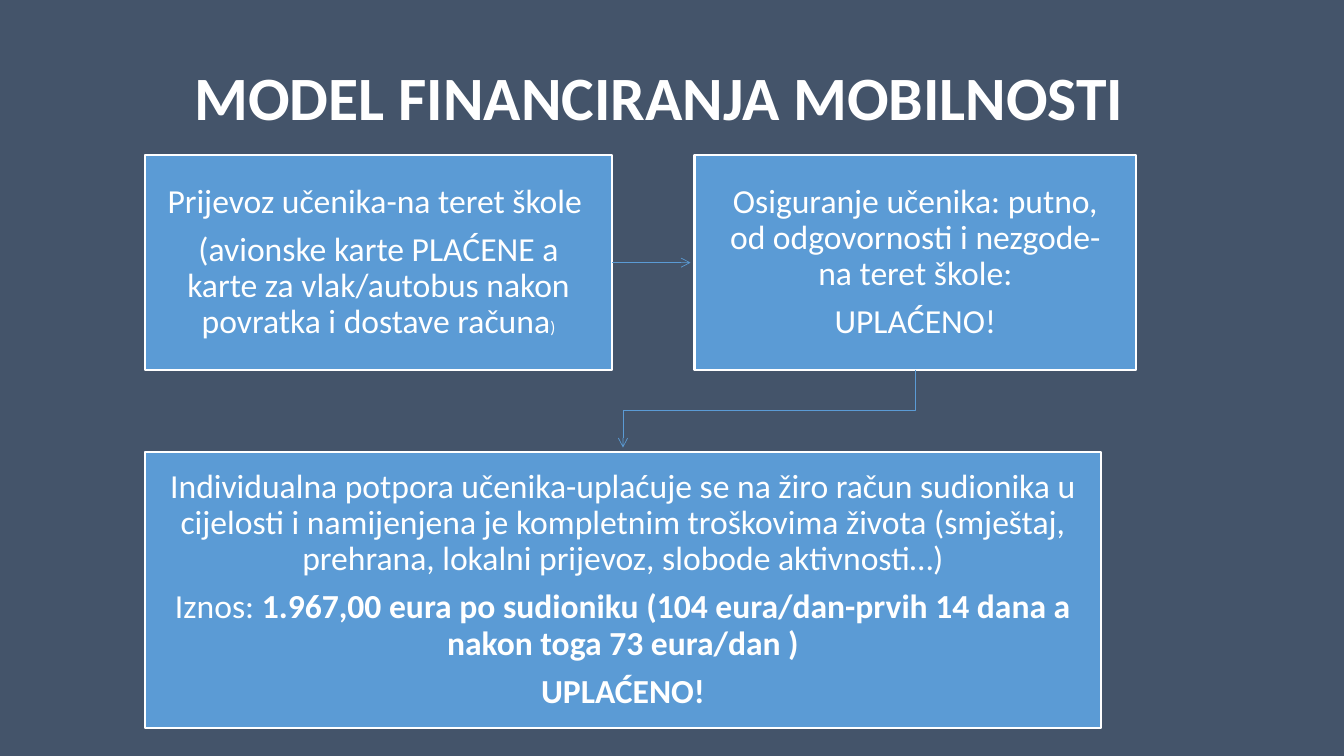
from dataclasses import dataclass

from lxml.etree import SubElement
from pptx import Presentation
from pptx.dml.color import RGBColor
from pptx.enum.shapes import MSO_CONNECTOR, MSO_SHAPE
from pptx.enum.text import MSO_ANCHOR, PP_ALIGN
from pptx.oxml.ns import qn
from pptx.shapes.autoshape import Shape
from pptx.slide import Slide
from pptx.text.text import TextFrame
from pptx.util import Pt


@dataclass(frozen=True)
class Theme:
    font: str = "Calibri"
    background: RGBColor = RGBColor(0x44, 0x54, 0x6A)
    accent: RGBColor = RGBColor(0x5B, 0x9B, 0xD5)
    white: RGBColor = RGBColor(0xFF, 0xFF, 0xFF)
    title: float = 44
    body: float = 24
    small: float = 12


THEME = Theme()
ARROW_GAP = 2.9


@dataclass(frozen=True)
class Span:
    text: str
    size: float = THEME.body
    bold: bool = False


@dataclass(frozen=True)
class Box:
    left: float
    top: float
    width: float
    height: float
    paragraphs: list[list[Span]]

    @property
    def center_x(self) -> float:
        return self.left + self.width / 2

    @property
    def center_y(self) -> float:
        return self.top + self.height / 2

    @property
    def bottom(self) -> float:
        return self.top + self.height


LEFT, TOP, ROW_HEIGHT = 103.7, 110.9, 153.4
TRANSPORT = Box(LEFT, TOP, 333.4, ROW_HEIGHT, [
    [Span("Prijevoz učenika-na teret škole ")],
    [Span("(avionske karte PLAĆENE a karte za vlak/autobus nakon "
          "povratka i dostave računa"), Span(")", size=THEME.small)],
])
INSURANCE = Box(496.1, TOP, 315.4, ROW_HEIGHT, [
    [Span("Osiguranje učenika: putno, od odgovornosti i nezgode- "
          "na teret škole:")],
    [Span("UPLAĆENO!")],
])
SUPPORT = Box(LEFT, 322.6, 682.6, 197.3, [
    [Span("Individualna potpora učenika-uplaćuje se na žiro račun sudionika "
          "u cijelosti i namijenjena je kompletnim troškovima života "
          "(smještaj, prehrana, lokalni prijevoz, slobode aktivnosti…)")],
    [Span("Iznos: "),
     Span("1.967,00 eura po sudioniku (104 eura/dan-prvih 14 dana a nakon "
          "toga 73 eura/dan )", bold=True)],
    [Span("UPLAĆENO!", bold=True)],
])


def write(tf: TextFrame, paragraphs: list[list[Span]], *,
          align: PP_ALIGN = PP_ALIGN.CENTER, space_after: float = 8.4,
          inset_x: float = 12.2, inset_y: float = 13) -> None:
    tf.word_wrap = True
    tf.vertical_anchor = MSO_ANCHOR.MIDDLE
    tf.margin_left = tf.margin_right = Pt(inset_x)
    tf.margin_top = tf.margin_bottom = Pt(inset_y)
    for i, spans in enumerate(paragraphs):
        p = tf.add_paragraph() if i else tf.paragraphs[0]
        p.alignment = align
        p.line_spacing = 0.9
        p.space_after = Pt(space_after)
        for span in spans:
            r = p.add_run()
            r.text = span.text
            r.font.name = THEME.font
            r.font.size = Pt(span.size)
            r.font.bold = span.bold
            r.font.color.rgb = THEME.white


def add_box(s: Slide, box: Box) -> Shape:
    sp = s.shapes.add_shape(MSO_SHAPE.RECTANGLE, Pt(box.left), Pt(box.top),
                            Pt(box.width), Pt(box.height))
    sp.shadow.inherit = False
    sp.fill.solid()
    sp.fill.fore_color.rgb = THEME.accent
    sp.line.color.rgb = THEME.white
    sp.line.width = Pt(1.5)
    write(sp.text_frame, box.paragraphs)
    return sp


def style_arrow(line) -> None:
    line.color.rgb = THEME.accent
    line.width = Pt(0.5)
    SubElement(line._get_or_add_ln(), qn("a:tailEnd"), type="arrow")


def add_straight_arrow(s: Slide, start_shape: Shape, start: Box,
                       end: Box) -> None:
    y = Pt(start.center_y)
    cxn = s.shapes.add_connector(MSO_CONNECTOR.STRAIGHT,
                                 Pt(start.left + start.width), y,
                                 Pt(end.left - ARROW_GAP), y)
    cxn.begin_connect(start_shape, 3)
    style_arrow(cxn.line)
    SubElement(cxn._element.spPr, qn("a:effectLst"))


def add_bent_arrow(s: Slide, start: Box, end: Box) -> None:
    """Run down from start, across halfway between the boxes, and down to end."""
    bend = (start.bottom + end.top) / 2
    points = [(start.center_x, bend), (end.center_x, bend),
              (end.center_x, end.top - ARROW_GAP)]
    builder = s.shapes.build_freeform(Pt(start.center_x), Pt(start.bottom))
    builder.add_line_segments([(Pt(x), Pt(y)) for x, y in points], close=False)
    sp = builder.convert_to_shape()
    sp.shadow.inherit = False
    sp.fill.background()
    style_arrow(sp.line)


def main() -> None:
    prs = Presentation()
    prs.slide_width, prs.slide_height = Pt(960), Pt(540)
    s = prs.slides.add_slide(prs.slide_layouts[6])
    s.background.fill.solid()
    s.background.fill.fore_color.rgb = THEME.background

    title = s.shapes.add_textbox(Pt(131.8), Pt(19.4), Pt(828), Pt(104.4))
    write(title.text_frame,
          [[Span("MODEL FINANCIRANJA MOBILNOSTI", THEME.title, bold=True)]],
          align=PP_ALIGN.LEFT, space_after=0, inset_x=7.2, inset_y=3.6)

    transport = add_box(s, TRANSPORT)
    add_box(s, INSURANCE)
    add_box(s, SUPPORT)
    add_straight_arrow(s, transport, TRANSPORT, INSURANCE)
    add_bent_arrow(s, INSURANCE, SUPPORT)
    prs.save("out.pptx")


if __name__ == "__main__":
    main()
